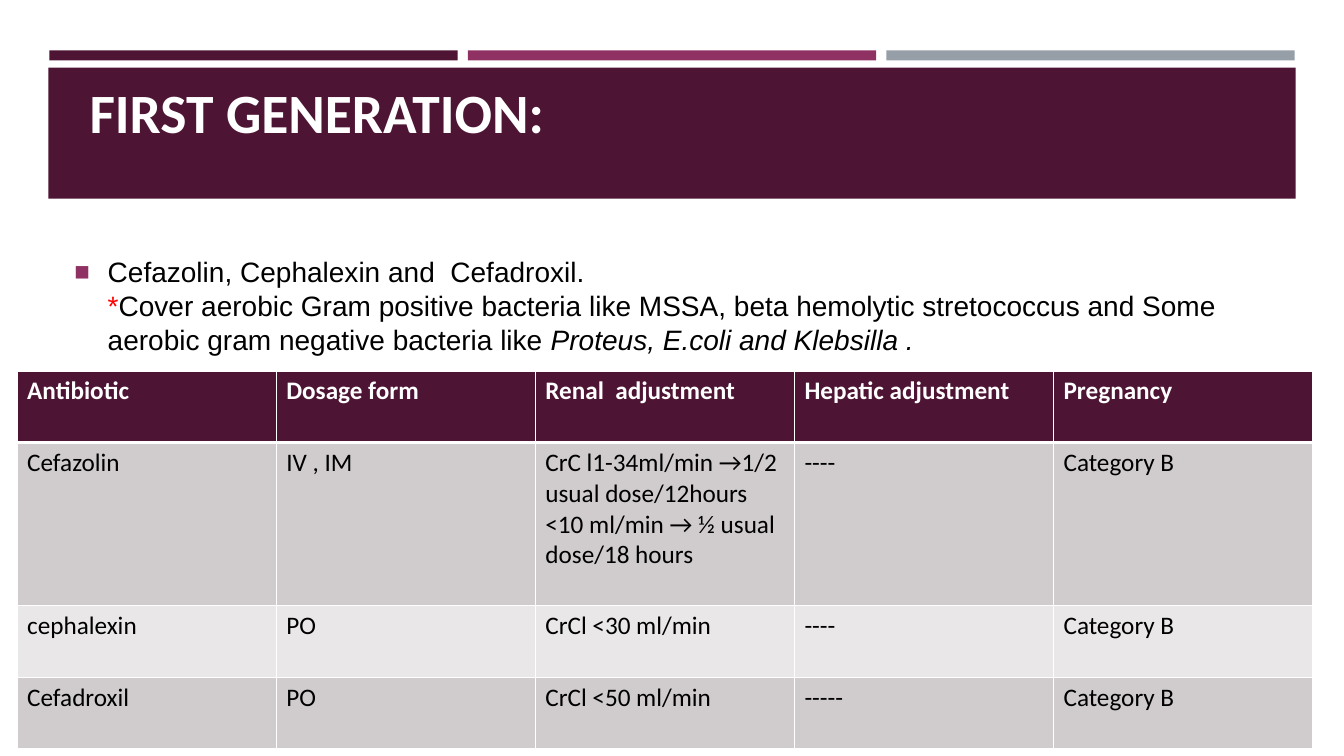
from lxml.etree import SubElement
from pptx import Presentation
from pptx.dml.color import RGBColor
from pptx.enum.shapes import MSO_SHAPE
from pptx.enum.text import MSO_ANCHOR
from pptx.oxml import parse_xml
from pptx.oxml.ns import nsdecls, qn
from pptx.util import Inches, Pt

PLUM, MAGENTA, GREY = "4D1434", "903163", "969FA7"
WHITE, BLACK, RED = "FFFFFF", "000000", "FF0000"
BAND_COLORS = ["D0CCCE", "E9E7E8"]
COLUMN_WIDTH = 2.57
ROW_HEIGHTS = [0.71, 1.62, 0.71, 0.71]
ANTIBIOTICS = [
    ["Antibiotic", "Dosage form", "Renal  adjustment", "Hepatic adjustment", "Pregnancy"],
    ["Cefazolin", "IV , IM",
     "CrC l1-34ml/min →1/2 usual dose/12hours\n<10 ml/min → ½ usual dose/18 hours",
     "----", "Category B"],
    ["cephalexin", "PO", "CrCl <30 ml/min", "----", "Category B"],
    ["Cefadroxil", "PO", "CrCl <50 ml/min", "-----", "Category B"],
]


def color(hex_code):
    """Turn a hex string into a colour."""
    return RGBColor.from_string(hex_code)


def add_bar(slide, left, top, width, height, fill):
    """Add a plain filled rectangle."""
    shape = slide.shapes.add_shape(
        MSO_SHAPE.RECTANGLE, Inches(left), Inches(top), Inches(width), Inches(height))
    shape.shadow.inherit = False
    shape.fill.solid()
    shape.fill.fore_color.rgb = color(fill)
    shape.line.fill.background()


def add_run(paragraph, text, size, font_name, font_color, bold=False, italic=False):
    """Add one formatted run to a paragraph."""
    run = paragraph.add_run()
    run.text = text
    font = run.font
    font.size, font.name, font.bold, font.italic = Pt(size), font_name, bold, italic
    font.color.rgb = color(font_color)


def add_text_frame(slide, left, top, width, height):
    """Add a wrapping text box and return its frame."""
    text_box = slide.shapes.add_textbox(
        Inches(left), Inches(top), Inches(width), Inches(height))
    frame = text_box.text_frame
    frame.word_wrap = True
    frame.vertical_anchor = MSO_ANCHOR.TOP
    frame.margin_top = frame.margin_bottom = 0
    return frame


def set_square_bullet(paragraph, indent, bullet_color):
    """Give a paragraph a hanging square bullet."""
    properties = paragraph._p.get_or_add_pPr()
    properties.set("marL", str(Inches(indent)))
    properties.set("indent", str(-Inches(indent)))
    bullet = SubElement(properties, qn("a:buClr"))
    SubElement(bullet, qn("a:srgbClr"), val=bullet_color)
    SubElement(properties, qn("a:buSzPct"), val="92000")
    SubElement(properties, qn("a:buFont"), typeface="Arial")
    SubElement(properties, qn("a:buChar"), char="■")


def add_summary(slide):
    """Add the bulleted description of the drug group."""
    paragraph = add_text_frame(slide, 0.64, 2.53, 12.06, 1.1).paragraphs[0]
    paragraph.line_spacing = Pt(24)
    set_square_bullet(paragraph, 0.33, MAGENTA)
    add_run(paragraph, "Cefazolin, Cephalexin and  Cefadroxil.", 20, "Arial", BLACK)
    paragraph.add_line_break()
    add_run(paragraph, "*", 20, "Arial", RED)
    add_run(paragraph, "Cover aerobic Gram positive bacteria like MSSA, beta hemolytic "
            "stretococcus and Some aerobic gram negative bacteria like ", 20, "Arial", BLACK)
    add_run(paragraph, "Proteus, E.coli and Klebsilla .", 20, "Arial", BLACK, italic=True)


def set_borders(cell, top, bottom):
    """Draw white cell borders with the given top and bottom weights."""
    properties = cell._tc.get_or_add_tcPr()
    weights = {"lnL": 1, "lnR": 1, "lnT": top, "lnB": bottom}
    for position, (side, weight) in enumerate(weights.items()):
        properties.insert(position, parse_xml(
            f'<a:{side} {nsdecls("a")} w="{Pt(weight)}"><a:solidFill>'
            f'<a:srgbClr val="{WHITE}"/></a:solidFill></a:{side}>'))


def fill_cell(cell, text, row_index):
    """Write and style a table cell according to its row."""
    is_header = row_index == 0
    cell.fill.solid()
    cell.fill.fore_color.rgb = color(
        PLUM if is_header else BAND_COLORS[(row_index - 1) % 2])
    set_borders(cell, 3 if row_index == 1 else 1, 3 if is_header else 1)
    frame = cell.text_frame
    for index, line in enumerate(text.split("\n")):
        paragraph = frame.add_paragraph() if index else frame.paragraphs[0]
        add_run(paragraph, line, 18, "Calibri", WHITE if is_header else BLACK, is_header)


def add_antibiotic_table(slide):
    """Add the table of doses and adjustments."""
    column_count = len(ANTIBIOTICS[0])
    table = slide.shapes.add_table(
        len(ANTIBIOTICS), column_count, Inches(0.17), Inches(3.68),
        Inches(COLUMN_WIDTH * column_count), Inches(sum(ROW_HEIGHTS))).table
    for column in table.columns:
        column.width = Inches(COLUMN_WIDTH)
    for row_index, texts in enumerate(ANTIBIOTICS):
        table.rows[row_index].height = Inches(ROW_HEIGHTS[row_index])
        for column_index, text in enumerate(texts):
            fill_cell(table.cell(row_index, column_index), text, row_index)


def main():
    """Build and save the slide."""
    presentation = Presentation()
    presentation.slide_width, presentation.slide_height = Inches(13.33), Inches(7.5)
    slide = presentation.slides.add_slide(presentation.slide_layouts[6])
    for index, fill in enumerate([PLUM, MAGENTA, GREY]):
        add_bar(slide, 0.49 + index * 4.15, 0.5, 4.05, 0.1, fill)
    add_bar(slide, 0.48, 0.67, 12.37, 1.3, PLUM)
    title = add_text_frame(slide, 0.79, 0.77, 10.58, 0.7).paragraphs[0]
    add_run(title, "FIRST GENERATION:", 39.6, "Calibri", WHITE, bold=True)
    add_summary(slide)
    add_antibiotic_table(slide)
    presentation.save("out.pptx")


if __name__ == "__main__":
    main()
